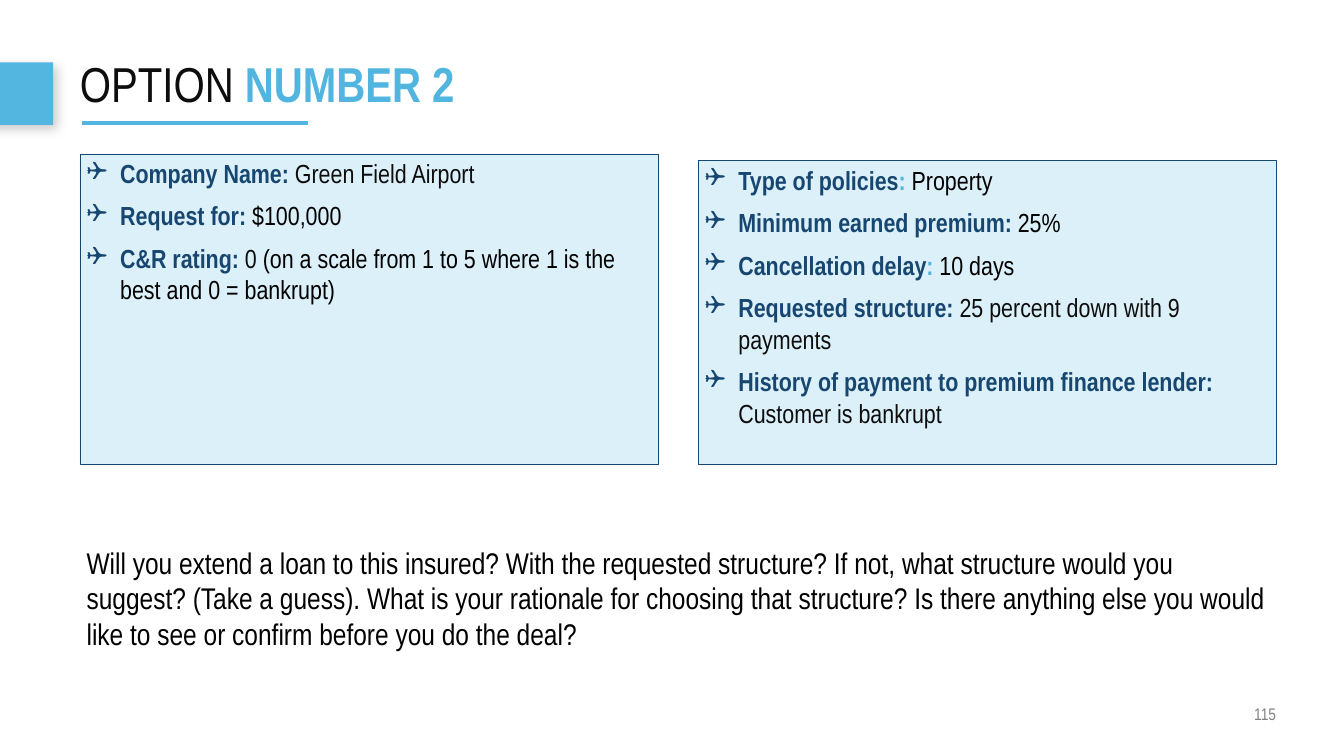
from dataclasses import dataclass

from lxml.etree import SubElement
from pptx import Presentation
from pptx.dml.color import RGBColor
from pptx.enum.shapes import MSO_CONNECTOR, MSO_SHAPE
from pptx.enum.text import MSO_ANCHOR, PP_ALIGN
from pptx.oxml.ns import qn
from pptx.util import Inches, Pt


@dataclass(frozen=True)
class Theme:
    font: str = "Arial Narrow"
    accent: str = "52B6E0"
    highlight: str = "51B5E0"
    navy: str = "174770"
    panel: str = "DCF0F9"
    ink: str = "0D0D0D"
    black: str = "000000"
    grey: str = "808084"
    title_size: float = 52.5
    panel_size: float = 28
    question_size: float = 32
    number_size: float = 18


THEME = Theme()
WIDTH, HEIGHT = 20, 11.25
MARGIN, COLUMN, GUTTER = 1.19, 8.6, 0.6
CONTENT = 2 * COLUMN + GUTTER
PANEL_BOTTOM = 6.91
INDENT = 0.5

COMPANY_FACTS = [
    [("Company Name: ", THEME.navy), ("Green Field Airport", THEME.ink)],
    [("Request for: ", THEME.navy), ("$100,000", THEME.black)],
    [("C&R rating: ", THEME.navy), ("0", THEME.ink),
     (" (on a scale from 1 to 5 where 1 is the best and 0 = bankrupt)", THEME.black)],
]
POLICY_FACTS = [
    [("Type of policies", THEME.navy), (": ", THEME.highlight), ("Property", THEME.black)],
    [("Minimum earned premium: ", THEME.navy), ("25%", THEME.black)],
    [("Cancellation delay", THEME.navy), (": ", THEME.highlight), ("10 days", THEME.black)],
    [("Requested structure: ", THEME.navy), ("25 percent down with 9 payments", THEME.ink)],
    [("History of payment to premium finance lender: ", THEME.navy),
     ("Customer is bankrupt", THEME.ink)],
]
QUESTION = (
    "Will you extend a loan to this insured? With the requested structure? If not, "
    "what structure would you suggest? (Take a guess). What is your rationale for "
    "choosing that structure? Is there anything else you would like to see or confirm "
    "before you do the deal?"
)


def column_left(column):
    return MARGIN + column * (COLUMN + GUTTER)


def box(left, top, width, height):
    return [Inches(length) for length in (left, top, width, height)]


def add_bullet(paragraph, symbol):
    properties = paragraph._p.get_or_add_pPr()
    properties.set("marL", str(Inches(INDENT)))
    properties.set("indent", str(-Inches(INDENT)))
    SubElement(properties, qn("a:buFont"), typeface="Wingdings")
    SubElement(properties, qn("a:buChar"), char=symbol)


def write(shape, paragraphs, *, size, align=PP_ALIGN.LEFT, anchor=MSO_ANCHOR.TOP,
          inset=None, line_spacing=None, space_after=None, bullet=None):
    """Fill a shape with paragraphs of (text, colour) runs; label colours are bold."""
    frame = shape.text_frame
    frame.word_wrap = True
    frame.vertical_anchor = anchor
    if inset is not None:
        frame.margin_left = frame.margin_right = Inches(inset)
        frame.margin_top = frame.margin_bottom = Inches(inset)
    for index, runs in enumerate(paragraphs):
        paragraph = frame.add_paragraph() if index else frame.paragraphs[0]
        paragraph.alignment = align
        if line_spacing:
            paragraph.line_spacing = line_spacing
        if space_after:
            paragraph.space_after = Pt(space_after)
        if bullet:
            add_bullet(paragraph, bullet)
        for text, colour in runs:
            run = paragraph.add_run()
            run.text = text
            run.font.name = THEME.font
            run.font.size = Pt(size)
            run.font.bold = colour in (THEME.navy, THEME.highlight)
            run.font.color.rgb = RGBColor.from_string(colour)


def add_rectangle(slide, place, fill, outline=None):
    rectangle = slide.shapes.add_shape(MSO_SHAPE.RECTANGLE, *box(*place))
    rectangle.shadow.inherit = False
    rectangle.fill.solid()
    rectangle.fill.fore_color.rgb = RGBColor.from_string(fill)
    if outline:
        rectangle.line.color.rgb = RGBColor.from_string(outline)
        rectangle.line.width = Pt(0.75)
    else:
        rectangle.line.fill.background()
    return rectangle


def add_side_tab(slide):
    tab = add_rectangle(slide, (-0.51, 0.93, 1.3, 0.93), THEME.accent)
    effects = tab._element.spPr.find(qn("a:effectLst"))
    shadow = SubElement(effects, qn("a:outerShdw"), blurRad=str(Pt(12)), dist=str(Pt(7)),
                        dir=str(45 * 60000), algn="tl", rotWithShape="0")
    colour = SubElement(shadow, qn("a:srgbClr"), val=THEME.black)
    SubElement(colour, qn("a:alpha"), val="20000")


def add_title_rule(slide):
    left, right, level = Inches(1.22), Inches(4.59), Inches(1.83)
    rule = slide.shapes.add_connector(MSO_CONNECTOR.STRAIGHT, left, level, right, level)
    rule.line.color.rgb = RGBColor.from_string(THEME.accent)
    rule.line.width = Pt(5)
    SubElement(rule._element.spPr, qn("a:effectLst"))


def set_title(slide, runs):
    title = slide.shapes.title
    title.left, title.top, title.width, title.height = box(MARGIN, 0.59, CONTENT, 1.41)
    write(title, [runs], size=THEME.title_size, anchor=MSO_ANCHOR.MIDDLE, inset=0,
          line_spacing=0.9)


def add_fact_panel(slide, column, top, facts):
    place = (column_left(column), top, COLUMN, PANEL_BOTTOM - top)
    panel = add_rectangle(slide, place, THEME.panel, outline=THEME.navy)
    write(panel, facts, size=THEME.panel_size, space_after=12, bullet="❑")


def add_text(slide, place, text, colour, **style):
    write(slide.shapes.add_textbox(*box(*place)), [[(text, colour)]], **style)


def main():
    deck = Presentation()
    deck.slide_width, deck.slide_height = Inches(WIDTH), Inches(HEIGHT)
    title_only = deck.slide_layouts[5]
    slide = deck.slides.add_slide(title_only)

    add_title_rule(slide)
    add_side_tab(slide)
    set_title(slide, [("OPTION", THEME.ink), (" NUMBER 2", THEME.highlight)])
    add_fact_panel(slide, 0, 2.29, COMPANY_FACTS)
    add_fact_panel(slide, 1, 2.39, POLICY_FACTS)
    add_text(slide, (MARGIN, 8.05, CONTENT, 2.02), QUESTION, THEME.black,
             size=THEME.question_size)
    number_width = 4.5
    add_text(slide, (MARGIN + CONTENT - number_width, 10.43, number_width, 0.38), "115",
             THEME.grey, size=THEME.number_size, align=PP_ALIGN.RIGHT,
             anchor=MSO_ANCHOR.MIDDLE, inset=0)
    deck.save("out.pptx")


if __name__ == "__main__":
    main()
